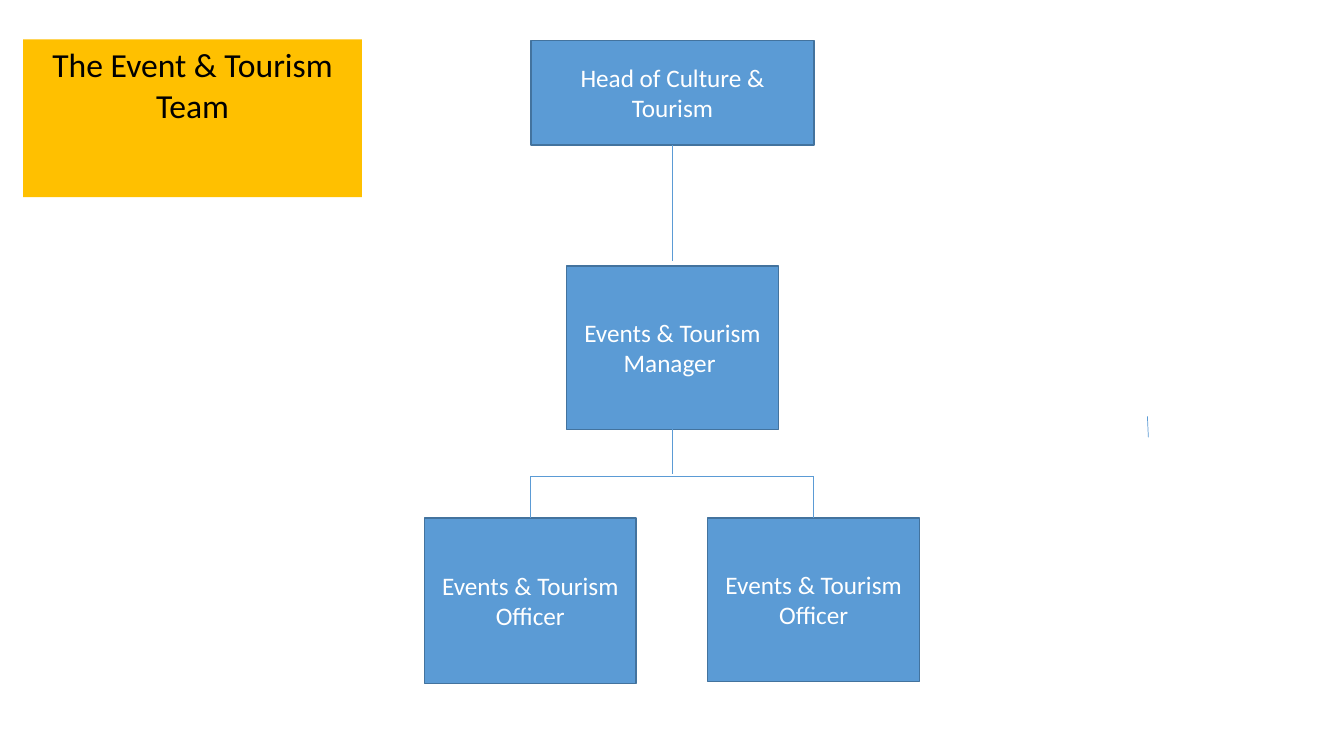
from lxml import etree
from pptx import Presentation
from pptx.dml.color import RGBColor
from pptx.enum.shapes import MSO_CONNECTOR, MSO_SHAPE
from pptx.enum.text import MSO_ANCHOR, MSO_AUTO_SIZE, PP_ALIGN
from pptx.oxml.ns import qn
from pptx.util import Pt

PX = 9144
FONT = "Calibri"
BLUE = RGBColor(0x5B, 0x9B, 0xD5)
DARK_BLUE = RGBColor(0x43, 0x73, 0x9E)
AMBER = RGBColor(0xFF, 0xC0, 0x00)
WHITE = RGBColor(0xFF, 0xFF, 0xFF)
BLACK = RGBColor(0x00, 0x00, 0x00)

RECTANGLE = MSO_SHAPE.RECTANGLE
STRAIGHT = MSO_CONNECTOR.STRAIGHT
TOP = MSO_ANCHOR.TOP
MIDDLE = MSO_ANCHOR.MIDDLE
CENTER = PP_ALIGN.CENTER
GROW = MSO_AUTO_SIZE.SHAPE_TO_FIT_TEXT

CENTER_X = 667
LEFT_X = 526
RIGHT_X = 807
BRANCH_Y = 473
OFFICER_TOP = 514
ROLE_WIDTH = 210


def write_text(shape, text, size, color, anchor):
    frame = shape.text_frame
    frame.word_wrap = True
    frame.vertical_anchor = anchor
    paragraph = frame.paragraphs[0]
    paragraph.alignment = CENTER
    run = paragraph.add_run()
    run.text = text
    run.font.name = FONT
    run.font.size = Pt(size)
    run.font.color.rgb = color


def add_title(slide, text, left, top, width, height):
    title = slide.shapes.title
    title.left, title.top = left * PX, top * PX
    title.width, title.height = width * PX, height * PX
    title.fill.solid()
    title.fill.fore_color.rgb = AMBER
    write_text(title, text, 24, BLACK, TOP)
    title.text_frame.auto_size = GROW


def add_role(slide, text, center_x, top, width, height):
    left = center_x * PX - width * PX // 2
    shape = slide.shapes.add_shape(RECTANGLE, left, top * PX, width * PX, height * PX)
    shape.shadow.inherit = False
    shape.fill.solid()
    shape.fill.fore_color.rgb = BLUE
    shape.line.color.rgb = DARK_BLUE
    shape.line.width = Pt(1)
    write_text(shape, text, 18, WHITE, MIDDLE)


def add_line(slide, start_x, start_y, end_x, end_y):
    line = slide.shapes.add_connector(
        STRAIGHT, start_x * PX, start_y * PX, end_x * PX, end_y * PX
    )
    line.line.color.rgb = BLUE
    line.line.width = Pt(0.5)
    etree.SubElement(line._element.spPr, qn("a:effectLst"))


def main():
    presentation = Presentation()
    presentation.slide_width = 1333 * PX
    presentation.slide_height = 750 * PX
    slide = presentation.slides.add_slide(presentation.slide_layouts[5])

    add_title(slide, "The Event & Tourism Team", 23, 39, 336, 91)
    add_role(slide, "Head of Culture & Tourism", CENTER_X, 40, 281, 104)
    add_role(slide, "Events & Tourism Manager ", CENTER_X, 264, ROLE_WIDTH, 162)
    for center_x, height in ((LEFT_X, 164), (RIGHT_X, 162)):
        add_role(slide, "Events & Tourism Officer", center_x, OFFICER_TOP, ROLE_WIDTH, height)
        add_line(slide, center_x, BRANCH_Y, center_x, OFFICER_TOP)

    for start_y, end_y in ((144, 185), (185, 259), (426, 470)):
        add_line(slide, CENTER_X, start_y, CENTER_X, end_y)
    add_line(slide, LEFT_X, BRANCH_Y, RIGHT_X, BRANCH_Y)
    add_line(slide, 1138, 413, 1139, 434)

    presentation.save("out.pptx")


if __name__ == "__main__":
    main()
